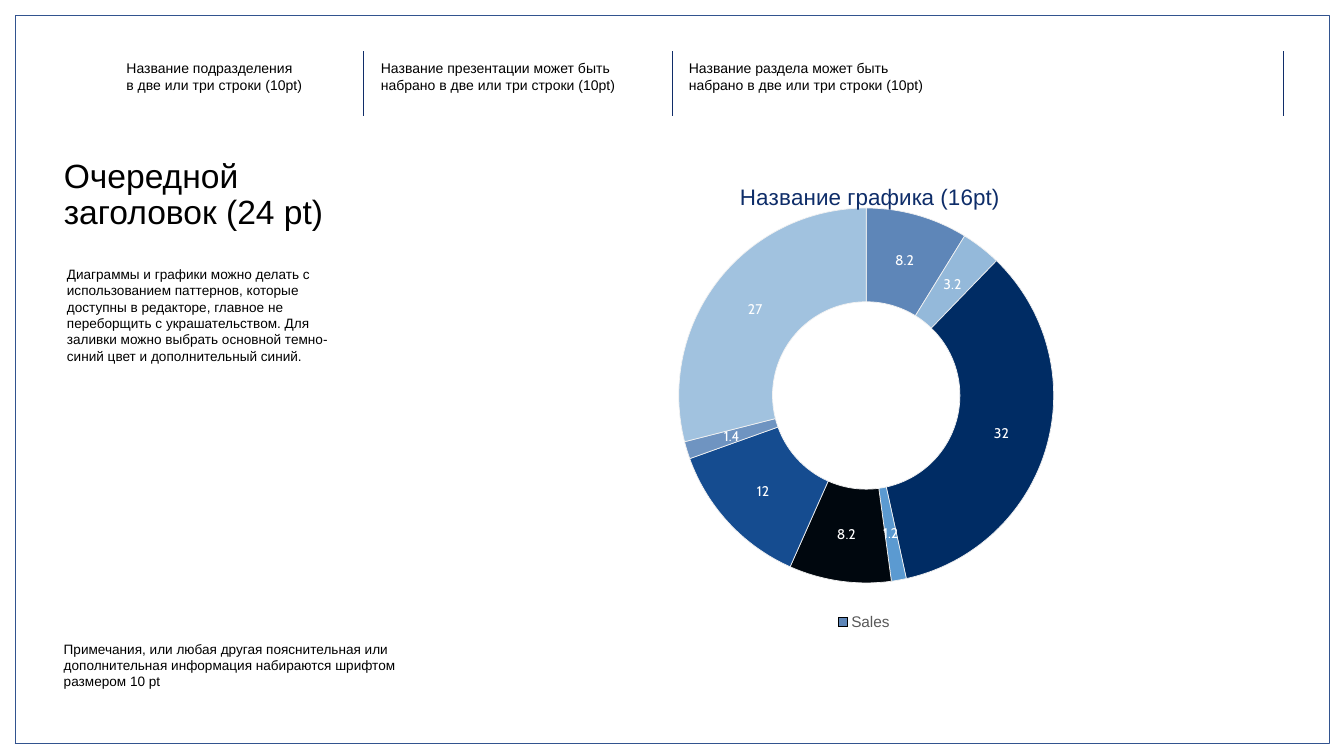
from typing import NamedTuple

from lxml.etree import SubElement
from pptx import Presentation
from pptx.chart.data import CategoryChartData
from pptx.dml.color import RGBColor
from pptx.enum.chart import XL_CHART_TYPE as Kind, XL_LEGEND_POSITION as Spot
from pptx.enum.shapes import MSO_CONNECTOR as Link, MSO_SHAPE as Form
from pptx.enum.text import MSO_ANCHOR as Anchor, MSO_AUTO_SIZE as Fit, PP_ALIGN as Align
from pptx.oxml import parse_xml
from pptx.oxml.ns import nsdecls, qn
from pptx.util import Pt

COLORS = {
    "paper": "FFFFFF", "text": "000000", "frame": "32538F", "rule": "102D69",
    "title": "0E2D69", "legend": "595959", "edge": "F2F2F2",
}
SLICES = {
    "5E86B8": 8.2, "94B9DA": 3.2, "002C64": 32, "5B9AD1": 1.2,
    "00070E": 8.2, "154C90": 12, "6F94C1": 1.4, "A1C2DF": 27,
}
RULES = (519, 960.5, 1833.5)


class Note(NamedTuple):
    text: str
    left: float
    top: float
    width: float
    height: float
    size: float = 20


HEAD = Note("Очередной \vзаголовок (24 pt)", 84, 220.5, 436, 124.5, 48)
NOTES = (
    Note("Название подразделения\vв две или три строки (10pt)", 173.5, 78.5, 355, 62.5),
    Note("Название презентации может быть набрано в две или три строки (10pt)",
         537, 78.5, 355, 86.5),
    Note("Название раздела может быть набрано в две или три строки (10pt)",
         977, 78.5, 355, 86.5),
    Note("Диаграммы и графики можно делать с использованием паттернов, которые "
         "доступны в редакторе, главное не переборщить с украшательством. Для "
         "заливки можно выбрать основной темно-синий цвет и дополнительный синий.",
         88.5, 373, 427.5, 158.5, 19.4),
    Note("Примечания, или любая другая пояснительная или дополнительная "
         "информация набираются шрифтом размером 10 pt", 84, 908, 515, 86.5, 19.4),
)


def color(key: str) -> RGBColor:
    return RGBColor.from_string(COLORS.get(key, key))


def style(font, size: float, key: str, face: str = "Arial") -> None:
    font.name, font.size, font.bold = face, Pt(size), False
    font.color.rgb = color(key)


def write(frame, text: str, *, size: float, key: str = "text", space: float = 1) -> None:
    frame.text = text
    para = frame.paragraphs[0]
    para.line_spacing, para.space_before = space, Pt(0)
    for run in para.runs:
        style(run.font, size, key)


def place(shape, note: Note, space: float = 1) -> None:
    shape.left, shape.top = Pt(note.left), Pt(note.top)
    shape.width, shape.height = Pt(note.width), Pt(note.height)
    frame = shape.text_frame
    frame.margin_left = frame.margin_right = Pt(7.2)
    frame.margin_top = frame.margin_bottom = Pt(7.2)
    frame.word_wrap, frame.auto_size = True, Fit.NONE
    frame.vertical_anchor = Anchor.TOP
    write(frame, note.text, size=note.size, space=space)
    frame.paragraphs[0].alignment = Align.LEFT


def border(slide) -> None:
    box = slide.shapes.add_shape(Form.RECTANGLE, Pt(21), Pt(21.5), Pt(1878), Pt(1039.5))
    box.shadow.inherit = False
    box.fill.solid()
    box.fill.fore_color.rgb = color("paper")
    box.line.color.rgb = color("frame")
    box.line.width = Pt(0.25)


def rule(slide, x: float) -> None:
    line = slide.shapes.add_connector(Link.STRAIGHT, Pt(x), Pt(73.5), Pt(x), Pt(165.5))
    line.line.color.rgb = color("rule")
    line.line.width = Pt(0.75)
    SubElement(line.element.spPr, qn("a:effectLst"))


def pin(part, index: int, **sides: float | str) -> None:
    """Give a chart part a manual layout, as fractions of the chart."""
    for old in part.findall(qn("c:layout")):
        part.remove(old)
    rows = "".join(f'<c:{tag} val="{val}"/>' for tag, val in sides.items())
    part.insert(index, parse_xml(
        f'<c:layout {nsdecls("c")}><c:manualLayout>{rows}</c:manualLayout></c:layout>'))


def arrange(chart) -> None:
    """Keep the title above the ring and the legend below it."""
    root = chart.element
    title, area, legend = (
        root.find(".//" + qn(tag)) for tag in ("c:title", "c:plotArea", "c:legend"))
    edge = {"xMode": "edge", "yMode": "edge"}
    pin(title, 1, **edge, x=0.26, y=0.01)
    pin(area, 0, layoutTarget="inner", **edge, x=0.15, y=0.074, w=0.7, h=0.797)
    pin(legend, 1, **edge, x=0.44, y=0.93)
    title.find(qn("c:overlay")).set("val", "1")
    area.find(".//" + qn("c:holeSize")).set("val", "49")


def donut(slide) -> None:
    data = CategoryChartData()
    data.categories = [str(n + 1) for n in range(len(SLICES))]
    data.add_series("Sales", SLICES.values())
    chart = slide.shapes.add_chart(
        Kind.DOUGHNUT, Pt(849.5), Pt(247.5), Pt(776), Pt(672), data).chart
    style(chart.font, 10, "text")
    chart.has_title = True
    write(chart.chart_title.text_frame, "Название графика (16pt)", size=32, key="title")
    chart.has_legend = True
    chart.legend.position = Spot.BOTTOM
    chart.legend.include_in_layout = True
    style(chart.legend.font, 22, "legend")

    plot = chart.plots[0]
    plot.vary_by_categories = False
    row = plot.series[0]
    row.format.fill.solid()
    row.format.fill.fore_color.rgb = color("5E86B8")
    row.format.line.color.rgb = color("text")
    for n, shade in enumerate(SLICES):
        look = row.points[n].format
        look.fill.solid()
        look.fill.fore_color.rgb = color(shade)
        look.line.color.rgb = color("edge")
        look.line.width = Pt(1)
    tags = row.data_labels
    tags.show_value = True
    tags.number_format, tags.number_format_is_linked = "General", False
    style(tags.font, 20, "paper", "Cabin")
    arrange(chart)


def main() -> None:
    deck = Presentation()
    deck.slide_width, deck.slide_height = Pt(1920), Pt(1080)
    slide = deck.slides.add_slide(deck.slide_layouts[5])
    border(slide)
    for x in RULES:
        rule(slide, x)
    title = slide.shapes.title
    place(title, HEAD, space=0.9)
    tree = title.element.getparent()
    tree.append(title.element)  # bring the title above the frame
    for note in NOTES:
        place(slide.shapes.add_textbox(0, 0, 0, 0), note)
    donut(slide)
    deck.save("out.pptx")


if __name__ == "__main__":
    main()
